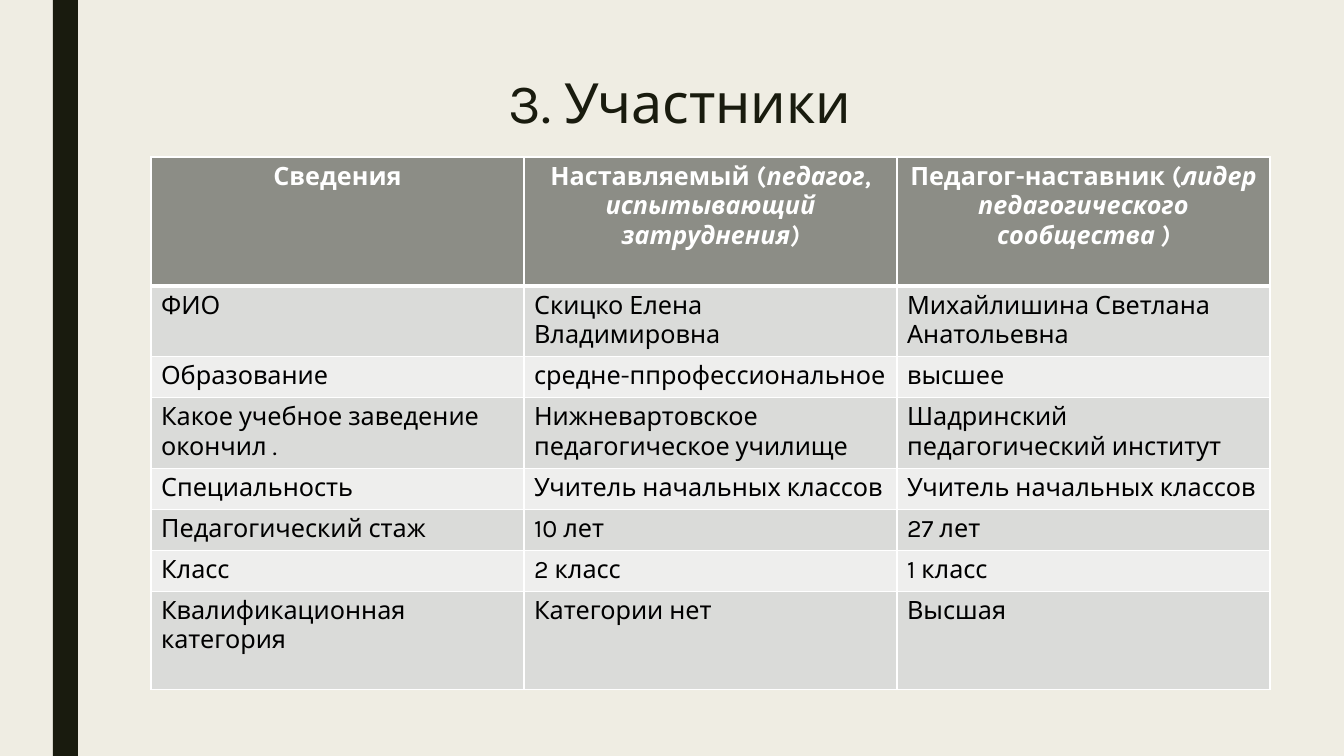
from lxml.etree import SubElement
from pptx import Presentation
from pptx.dml.color import RGBColor as Color
from pptx.enum.shapes import MSO_SHAPE as Shape
from pptx.enum.text import MSO_ANCHOR as Anchor, PP_ALIGN as Align
from pptx.oxml.ns import qn
from pptx.util import Emu, Pt

TITLE = "3. Участники"
HEADERS = [
    ("Сведения", ""),
    ("Наставляемый (", "педагог, испытывающий затруднения)"),
    ("Педагог-наставник (", "лидер педагогического сообщества )"),
]
ROWS = [
    ("ФИО", "Скицко Елена Владимировна", "Михайлишина Светлана Анатольевна"),
    ("Образование", "средне-ппрофессиональное", "высшее"),
    ("Какое учебное заведение окончил .", "Нижневартовское педагогическое училище",
     "Шадринский педагогический институт"),
    ("Специальность", "Учитель начальных классов", "Учитель начальных классов"),
    ("Педагогический стаж", "10 лет", "27 лет"),
    ("Класс", "2 класс", "1 класс"),
    ("Квалификационная категория", "Категории нет", "Высшая"),
]
ROW_HEIGHTS = [129, 69, 41, 69, 41, 41, 41, 98]
COLUMN_WIDTH = 373
TABLE_LEFT, TABLE_TOP = 151, 157
PAGE_WIDTH, PAGE_HEIGHT = 1344, 756

THEME = {
    "font": "Karla",
    "title_size": 39.6,
    "table_size": 18,
    "page": "EFEDE3",
    "dark": "191B0E",
    "header": "8C8D86",
    "bands": ("DADBD9", "EEEEED"),
    "body": "000000",
    "white": "FFFFFF",
}


def px(value):
    return Emu(round(value * 914400 / 100.8))


def paint(target, color):
    target.fill.solid()
    target.fill.fore_color.rgb = Color.from_string(color)


def set_font(font, size, color, bold=False):
    font.name = THEME["font"]
    font.size = Pt(size)
    font.bold = bold
    font.color.rgb = Color.from_string(color)


def add_borders(cell, top, bottom):
    properties = cell._tc.get_or_add_tcPr()
    for index, (side, width) in enumerate(
            (("lnL", 1), ("lnR", 1), ("lnT", top), ("lnB", bottom))):
        line = SubElement(properties, qn(f"a:{side}"), w=str(Pt(width)))
        fill = SubElement(line, qn("a:solidFill"))
        SubElement(fill, qn("a:srgbClr"), val=THEME["white"])
        properties.remove(line)
        properties.insert(index, line)


def add_title(page):
    box = page.shapes.add_textbox(px(151), px(76), px(1058), px(78))
    frame = box.text_frame
    frame.word_wrap = True
    frame.vertical_anchor = Anchor.TOP
    frame.margin_top = frame.margin_bottom = 0
    para = frame.paragraphs[0]
    para.text = TITLE
    para.alignment = Align.CENTER
    para.line_spacing = 0.89
    set_font(para.font, THEME["title_size"], THEME["dark"])


def add_participants(page):
    table = page.shapes.add_table(
        len(ROW_HEIGHTS), len(HEADERS), px(TABLE_LEFT), px(TABLE_TOP),
        px(COLUMN_WIDTH * len(HEADERS)), px(sum(ROW_HEIGHTS))).table
    for column in table.columns:
        column.width = px(COLUMN_WIDTH)
    for row, height in zip(table.rows, ROW_HEIGHTS):
        row.height = px(height)

    for column, (label, detail) in enumerate(HEADERS):
        cell = table.cell(0, column)
        paint(cell, THEME["header"])
        add_borders(cell, 1, 3)
        para = cell.text_frame.paragraphs[0]
        para.alignment = Align.CENTER
        set_font(para.font, THEME["table_size"], THEME["white"], True)
        para.add_run().text = label
        if detail:
            span = para.add_run()
            span.text = detail
            span.font.italic = True

    for row, texts in enumerate(ROWS, 1):
        for column, text in enumerate(texts):
            cell = table.cell(row, column)
            paint(cell, THEME["bands"][(row - 1) % 2])
            add_borders(cell, 3 if row == 1 else 1, 1)
            para = cell.text_frame.paragraphs[0]
            para.text = text
            set_font(para.font, THEME["table_size"], THEME["body"])


def main():
    deck = Presentation()
    deck.slide_width, deck.slide_height = px(PAGE_WIDTH), px(PAGE_HEIGHT)
    page = deck.slides.add_slide(deck.slide_layouts[6])
    paint(page.background, THEME["page"])
    stripe = page.shapes.add_shape(Shape.RECTANGLE, px(53), 0, px(25), px(PAGE_HEIGHT))
    stripe.shadow.inherit = False
    paint(stripe, THEME["dark"])
    stripe.line.fill.background()
    add_title(page)
    add_participants(page)
    deck.save("out.pptx")


if __name__ == "__main__":
    main()
